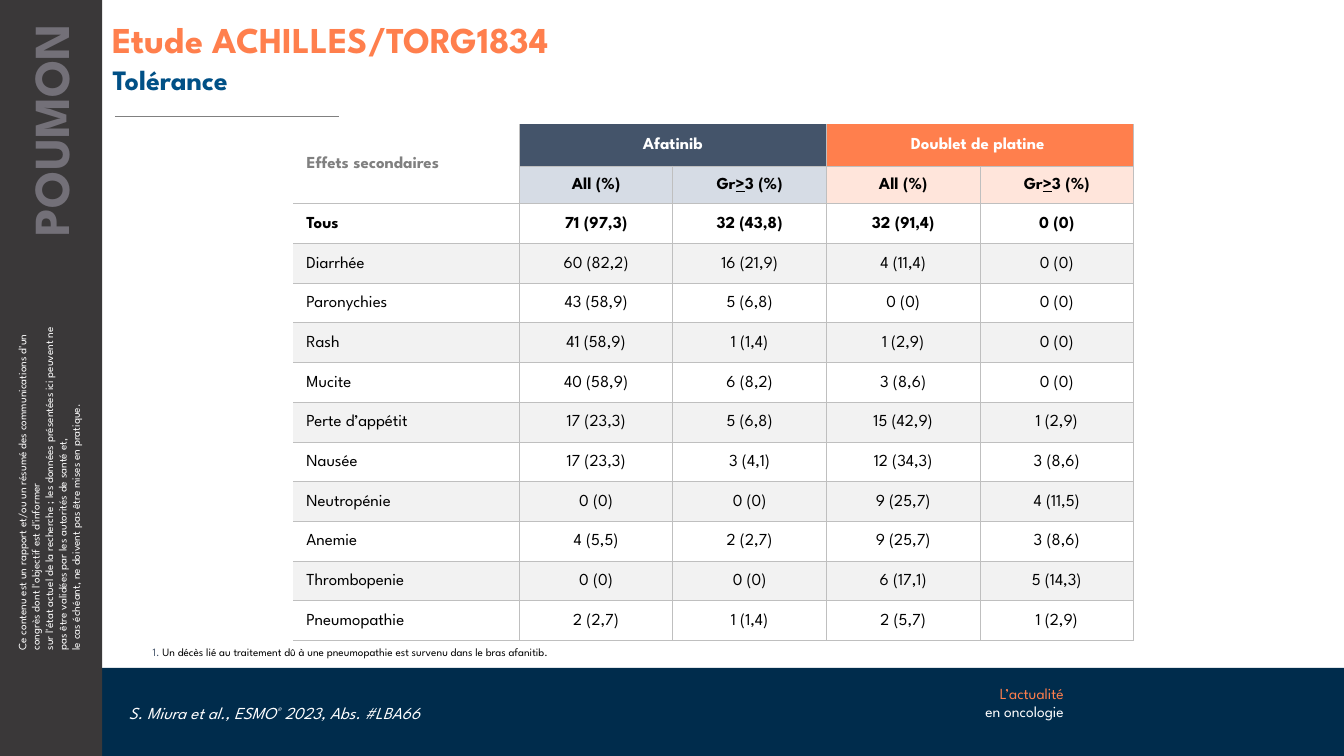
from lxml import etree
from pptx import Presentation
from pptx.dml.color import RGBColor as RGB
from pptx.enum import shapes as es, text as et
from pptx.oxml import ns
from pptx.util import Pt

FONT = "League Spartan"
NAVY = RGB(0x00, 0x2C, 0x4C)
DARK = RGB(0x3A, 0x38, 0x39)
MUTE = RGB(0x73, 0x70, 0x78)
BLUE = RGB(0x00, 0x50, 0x86)
CORAL = RGB(0xFF, 0x7F, 0x4D)
SLATE = RGB(0x44, 0x54, 0x6A)
PALE = RGB(0xD6, 0xDC, 0xE5)
PEACH = RGB(0xFF, 0xE5, 0xDB)
GREY = RGB(0x80, 0x80, 0x80)
RULE = RGB(0xBF, 0xBF, 0xBF)
BAND = RGB(0xF2, 0xF2, 0xF2)
WHITE = RGB(0xFF, 0xFF, 0xFF)
BLACK = RGB(0x00, 0x00, 0x00)

LEFT, MID, RIGHT = et.PP_ALIGN.LEFT, et.PP_ALIGN.CENTER, et.PP_ALIGN.RIGHT
TOP, CENTER, BOTTOM = (et.MSO_ANCHOR.TOP, et.MSO_ANCHOR.MIDDLE,
                       et.MSO_ANCHOR.BOTTOM)

NOTICE = ["Ce contenu est un rapport et/ou un résumé des communications d'un "
          "congrès dont l'objectif est d'informer ",
          "sur l'état actuel de la recherche ; les données présentées ici "
          "peuvent ne pas être validées par les autorités de santé et, ",
          "le cas échéant, ne doivent pas être mises en pratique."]

ARMS = ["Effets secondaires", "Afatinib", "", "Doublet de platine ", ""]
GRADES = ["", "All (%)", "Gr>3 (%)", "All (%)", "Gr>3 (%)"]
EFFECTS = [
    ["Tous", "71 (97,3)", "32 (43,8)", "32 (91,4)", "0 (0)"],
    ["Diarrhée", "60 (82,2)", "16 (21,9)", "4 (11,4)", "0 (0)"],
    ["Paronychies", "43 (58,9)", "5 (6,8)", "0 (0)", "0 (0)"],
    ["Rash", "41 (58,9)", "1 (1,4)", "1 (2,9)", "0 (0)"],
    ["Mucite", "40 (58,9)", "6 (8,2)", "3 (8,6)", "0 (0)"],
    ["Perte d’appétit", "17 (23,3)", "5 (6,8)", "15 (42,9)", "1 (2,9)"],
    ["Nausée", "17 (23,3)", "3 (4,1)", "12 (34,3)", "3 (8,6)"],
    ["Neutropénie", "0 (0)", "0 (0)", "9 (25,7)", "4 (11,5)"],
    ["Anemie", "4 (5,5)", "2 (2,7)", "9 (25,7)", "3 (8,6)"],
    ["Thrombopenie", "0 (0)", "0 (0)", "6 (17,1)", "5 (14,3)"],
    ["Pneumopathie", "2 (2,7)", "1 (1,4)", "2 (5,7)", "1 (2,9)"],
]
HEADS = [[None, SLATE, SLATE, CORAL, CORAL],
         [None, PALE, PALE, PEACH, PEACH]]


def style(para, size, color, bold=False, italic=False):
    for run in para.runs:
        font = run.font
        font.name, font.size, font.color.rgb = FONT, Pt(size), color
        font.bold, font.italic = bold, italic


def set_parts(para, parts, split=False):
    """Add one run per part, each on a new line if split is set."""
    for count, part in enumerate(parts):
        if split and count:
            para.add_line_break()
        para.add_run().text = part


def set_inset(frame, size):
    frame.margin_left = frame.margin_right = Pt(size)
    frame.margin_top = frame.margin_bottom = Pt(size)


def add_text(slide, box, parts, size, color, align=LEFT, anchor=TOP,
             split=False, **looks):
    """Add a text box with one run per part and return its paragraph."""
    frame = slide.shapes.add_textbox(*map(Pt, box)).text_frame
    frame.word_wrap, frame.vertical_anchor = True, anchor
    para = frame.paragraphs[0]
    para.alignment = align
    set_parts(para, parts, split)
    style(para, size, color, **looks)
    return para


def add_upward(slide, *args, **looks):
    """Add a text box without insets whose lines read upwards."""
    add_text(slide, *args, **looks)
    frame = slide.shapes[-1].text_frame
    set_inset(frame, 0)
    frame._txBody.bodyPr.set("vert", "vert270")


def add_panel(slide, box, color):
    shape = slide.shapes.add_shape(es.MSO_SHAPE.RECTANGLE, *map(Pt, box))
    shape.shadow.inherit = False
    shape.fill.solid()
    shape.fill.fore_color.rgb = color
    shape.line.fill.background()


def add_footer(slide, x, y, w, h):
    add_panel(slide, (x, y, w, h), NAVY)
    cite = add_text(slide, (x + 12, y + 2, 541, h - 2),
                    ["S. Miura et al., ESMO", "®", " 2023, Abs. #LBA66"],
                    12, WHITE, anchor=CENTER, italic=True)
    cite.runs[1]._r.get_or_add_rPr().set("baseline", "30000")
    box = (x + 576, y + 8, 118, 34)
    brand = add_text(slide, box, ["L’actualité", "en oncologie"],
                     11, WHITE, RIGHT, split=True)
    brand.runs[0].font.color.rgb = CORAL


def add_side(slide, x, y, w, h):
    add_panel(slide, (x, y, w, h), DARK)
    add_upward(slide, (x + 10.8, y + 220, 48.4, 244.6), NOTICE, 8, WHITE,
               split=True)
    add_upward(slide, (x + 13.6, y + 17, 43.8, 196.8), ["POUMON"], 36, MUTE,
               RIGHT, bold=True)


def add_head(slide, x, y, w):
    title = slide.shapes.title
    title.left, title.top, title.width, title.height = map(Pt, (x, y, w, 29))
    frame = title.text_frame
    frame.text = "Etude ACHILLES/TORG1834"
    frame.auto_size = et.MSO_AUTO_SIZE.NONE
    frame.vertical_anchor = TOP
    para = frame.paragraphs[0]
    para.alignment, para.line_spacing = LEFT, 0.9
    style(para, 26, CORAL, bold=True)
    add_text(slide, (x + 0.4, y + 29, w, 36), ["Tolérance"], 20, BLUE,
             bold=True)
    rule = slide.shapes.add_connector(
        es.MSO_CONNECTOR.STRAIGHT,
        *map(Pt, (x + 9, y + 70.8, x + 168.8, y + 70.8)))
    rule.line.color.rgb, rule.line.width = GREY, Pt(0.75)
    etree.SubElement(rule._element.spPr, ns.qn("a:effectLst"))


def add_edges(cell, shown):
    props = cell._tc.get_or_add_tcPr()
    for side in "LRTB":
        line = etree.SubElement(props, ns.qn("a:ln" + side),
                                w=str(Pt(0.75)))
        if side in shown:
            fill = etree.SubElement(line, ns.qn("a:solidFill"))
            etree.SubElement(fill, ns.qn("a:srgbClr"), val=str(RULE))
        else:
            etree.SubElement(line, ns.qn("a:noFill"))


def fill_cell(cell, row, col, words):
    head = row < 2
    cell.vertical_anchor = CENTER
    cell.margin_left = cell.margin_right = Pt(9.5 if head else 3)
    cell.margin_top = cell.margin_bottom = Pt(3 if row == 1 else 5.6)
    add_edges(cell, ("L" if col else "") + "R" + ("T" if row else "") + "B")
    shade = HEADS[row][col] if head else (WHITE, BAND)[row % 2]
    if shade:
        cell.fill.solid()
        cell.fill.fore_color.rgb = shade
    else:
        cell.fill.background()
    para = cell.text_frame.paragraphs[0]
    para.alignment, para.line_spacing = MID if col else LEFT, 1.1
    if not words:
        end = etree.SubElement(para._p, ns.qn("a:endParaRPr"), sz="1200")
        etree.SubElement(end, ns.qn("a:latin"), typeface=FONT)
        return
    if not head and not col:
        props = para._p.get_or_add_pPr()
        props.set("marL", str(Pt(7)))
        props.set("indent", str(Pt(-0.7)))
    before, mark, after = words.partition(">")
    set_parts(para, filter(None, (before, mark, after)))
    color = BLACK if row else WHITE if col else GREY
    style(para, 12, color, bold=row < 3)
    if mark:
        para.runs[1].font.underline = True


def add_grid(slide, x, y):
    rows = [ARMS, GRADES] + EFFECTS
    wide = [161.4] + [109.7] * 4
    tall = [30, 20] + [28.37] * len(EFFECTS)
    table = slide.shapes.add_table(
        len(rows), len(wide), *map(Pt, (x, y, sum(wide), sum(tall)))).table
    table.first_row = table.horz_banding = False
    for col, width in zip(table.columns, wide):
        col.width = Pt(width)
    for row, height in zip(table.rows, tall):
        row.height = Pt(height)
    for r, line in enumerate(rows):
        for c, words in enumerate(line):
            fill_cell(table.cell(r, c), r, c, words)
    for start, end in (((0, 0), (1, 0)), ((0, 1), (0, 2)), ((0, 3), (0, 4))):
        table.cell(*start).merge(table.cell(*end))


def add_note(slide, box):
    note = add_text(slide, box,
                    ["1. ", "Un décès lié au traitement dû à une pneumopathie "
                     "est survenu dans le bras afanitib."],
                    8, BLACK, anchor=BOTTOM)
    note.runs[0].font.color.rgb = SLATE
    set_inset(slide.shapes[-1].text_frame, 5.6)


def main():
    deck = Presentation()
    deck.slide_width, deck.slide_height = Pt(960), Pt(540)
    slide = deck.slides.add_slide(deck.slide_layouts[5])
    add_footer(slide, 73, 477, 887, 63)
    add_side(slide, 0, 0, 73, 540)
    add_head(slide, 73, 12.2, 877)
    add_grid(slide, 209.6, 88.6)
    add_note(slide, (103.5, 453.6, 825, 21.6))
    deck.save("out.pptx")


if __name__ == "__main__":
    main()
